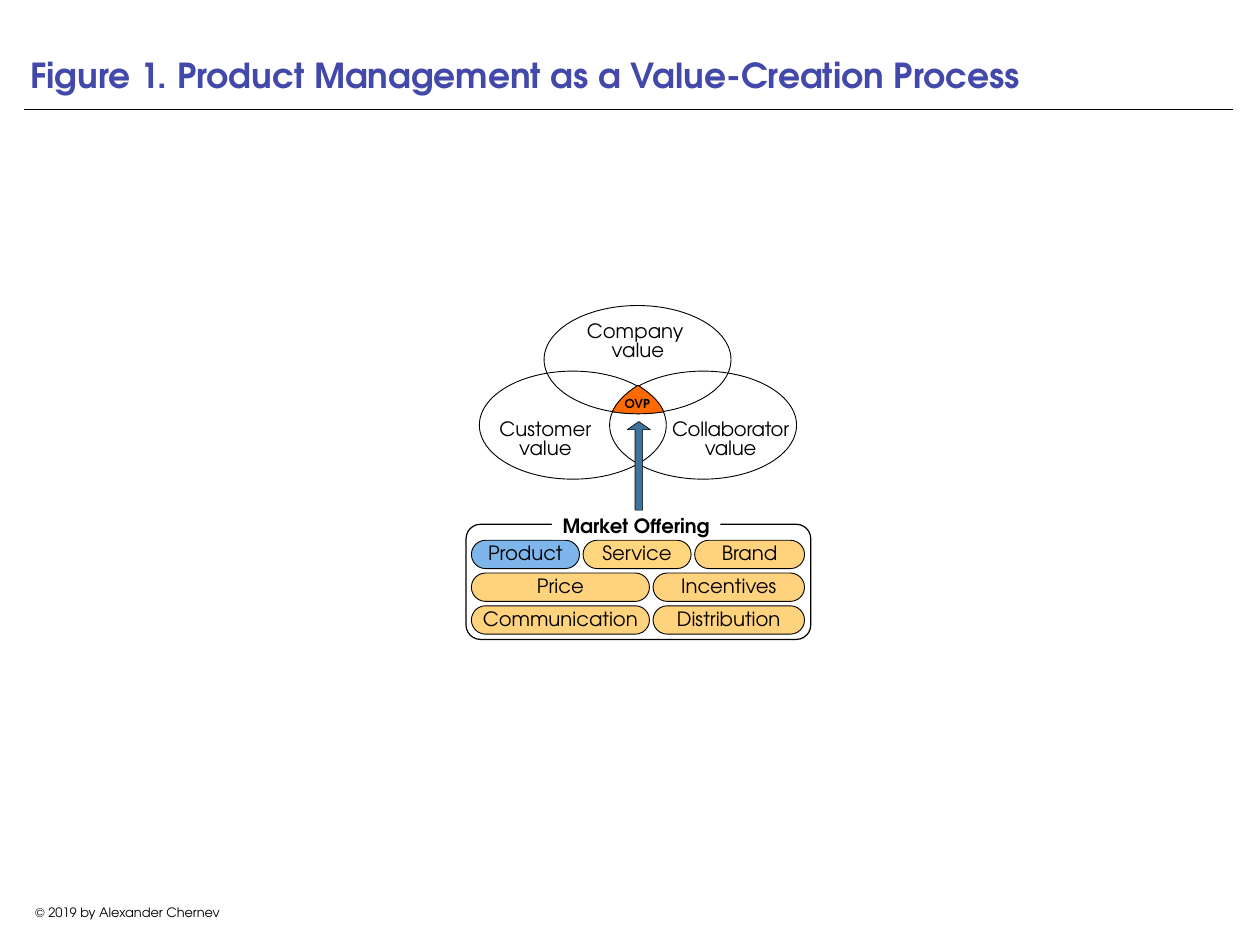
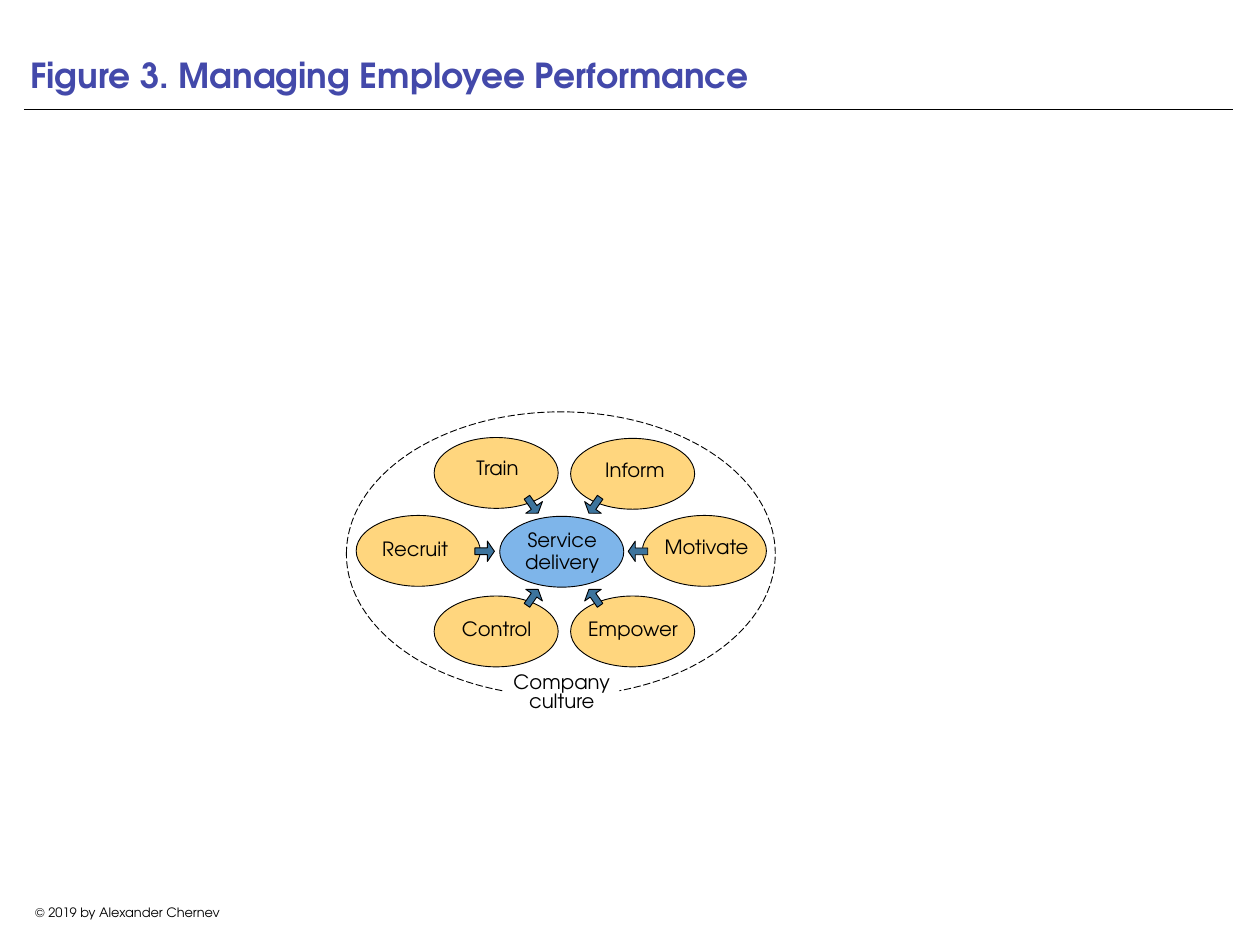
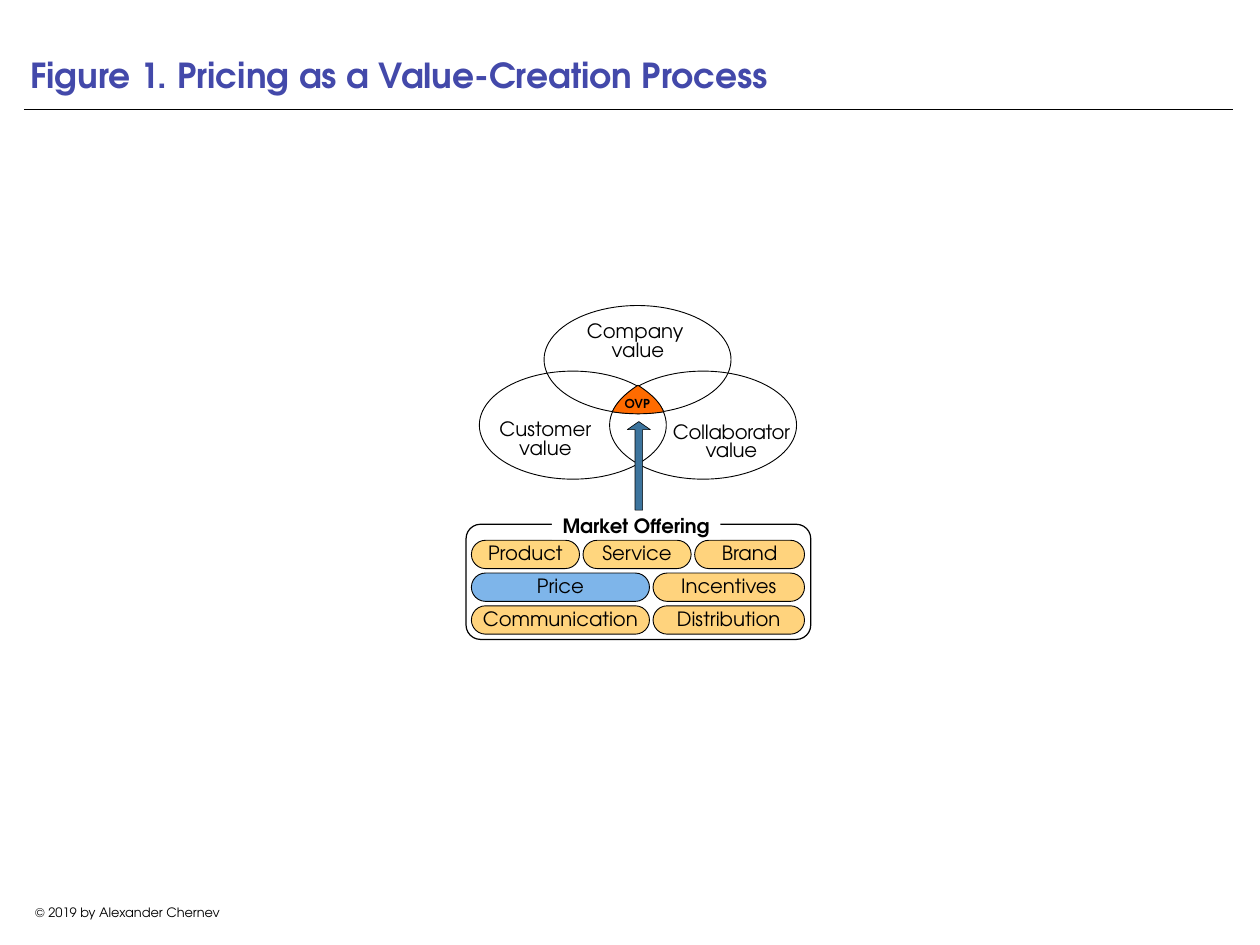
from typing import NamedTuple, Optional

from lxml import etree
from pptx import Presentation
from pptx.dml.color import RGBColor
from pptx.enum.dml import MSO_LINE
from pptx.enum.shapes import MSO_CONNECTOR, MSO_SHAPE as SHAPE
from pptx.enum.text import MSO_ANCHOR as ANCHOR, PP_ALIGN as ALIGN
from pptx.oxml.ns import qn
from pptx.util import Inches, Pt

BLACK = RGBColor(0x00, 0x00, 0x00)
WHITE = RGBColor(0xFF, 0xFF, 0xFF)
INDIGO = RGBColor(0x43, 0x49, 0xAA)
AMBER = RGBColor(0xFF, 0xD6, 0x7E)
SAND = RGBColor(0xFF, 0xD3, 0x7D)
SKY = RGBColor(0x7E, 0xB5, 0xEA)
STEEL = RGBColor(0x3D, 0x74, 0x9D)
ORANGE = RGBColor(0xFF, 0x6B, 0x00)

FONT = "TeX Gyre Adventor"
FOOTER = "© 2019 by Alexander Chernev"
NO_INSET = (0, 0, 0, 0)


class Box(NamedTuple):
    x: float
    y: float
    w: float
    h: float


class Style(NamedTuple):
    size: float = 16
    bold: bool = False
    color: RGBColor = BLACK
    align: ALIGN = ALIGN.CENTER
    anchor: ANCHOR = ANCHOR.MIDDLE
    spacing: float = 1.0
    tracking: int = 0
    insets: tuple = NO_INSET
    wrap: bool = True


class Pill(NamedTuple):
    text: str
    w: float
    fill: RGBColor = SAND


class Node(NamedTuple):
    text: str
    x: float
    y: float
    label_x: float
    label_y: float
    arrow_x: float
    arrow_y: float
    angle: float


TITLE = Style(28, True, INDIGO, ALIGN.LEFT, ANCHOR.BOTTOM, insets=(0.07,) * 4)
CREDIT = Style(10.5, anchor=ANCHOR.TOP, insets=(0.1, 0.05, 0.1, 0.05), wrap=False)
TIGHT = Style(spacing=0.8)
TRACKED = TIGHT._replace(tracking=-20)
PILL = TIGHT._replace(anchor=ANCHOR.BOTTOM)
CAPTION = TIGHT._replace(anchor=ANCHOR.TOP)
HEADING = Style(bold=True)
OVP = Style(10, True, align=ALIGN.LEFT)
CENTRE_LABEL = Style(spacing=0.9)
NODE_LABEL = CENTRE_LABEL._replace(anchor=ANCHOR.TOP)

VALUE_W, VALUE_H = 2.11, 1.22
VALUE_CIRCLES = [(5.41, 4.19), (6.88, 4.19), (6.14, 3.45)]
OVP_START = (6.91, 4.65)
OVP_CURVES = [
    ((6.96, 4.54), (7.06, 4.44), (7.2, 4.35)),
    ((7.34, 4.44), (7.45, 4.54), (7.49, 4.65)),
    ((7.31, 4.68), (7.1, 4.68), (6.91, 4.65)),
]
CURVE_STEPS = 12

PILL_X, PILL_Y, PILL_H = 5.32, 6.1, 0.32
PILL_GAP, PILL_PITCH = 0.04, 0.37
PILL_ROWS = [
    [Pill("Product", 1.22, AMBER), Pill("Service", 1.22, AMBER), Pill("Brand", 1.24)],
    [Pill("Price", 2.01), Pill("Incentives", 1.71)],
    [Pill("Communication", 2.01), Pill("Distribution", 1.71)],
]

NODE_W, NODE_H, LABEL_W, LABEL_H = 1.4, 0.8, 1.47, 0.38
NODES = [
    Node("Recruit", 4.02, 5.82, 3.95, 6.09, 5.36, 6.11, 0),
    Node("Motivate", 7.25, 5.82, 7.24, 6.07, 7.09, 6.11, 180),
    Node("Empower", 6.44, 6.73, 6.41, 7.0, 6.6, 6.63, 235),
    Node("Control", 4.9, 6.73, 4.87, 7.0, 5.9, 6.63, 305),
    Node("Train", 4.9, 4.94, 4.88, 5.18, 5.9, 5.59, 55),
    Node("Inform", 6.44, 4.95, 6.43, 5.2, 6.6, 5.59, 125),
]


def write(sp, text: str, style: Style) -> None:
    tf = sp.text_frame
    left, top, right, bottom = map(Inches, style.insets)
    frame = dict(word_wrap=style.wrap, vertical_anchor=style.anchor, margin_left=left,
                 margin_top=top, margin_right=right, margin_bottom=bottom)
    for name, value in frame.items():
        setattr(tf, name, value)
    p = tf.paragraphs[0]
    p.text = text
    p.alignment = style.align
    p.line_spacing = style.spacing
    for r in p.runs:
        for name, value in dict(name=FONT, size=Pt(style.size), bold=style.bold).items():
            setattr(r.font, name, value)
        r.font.color.rgb = style.color
        if style.tracking:
            r.font._element.set("spc", str(style.tracking))


def add_text(s, box: Box, text: str, style: Style) -> None:
    write(s.shapes.add_textbox(*map(Inches, box)), text, style)


def paint(sp, fill: Optional[RGBColor], width: float) -> None:
    sp.shadow.inherit = False
    if fill is None:
        sp.fill.background()
    else:
        sp.fill.solid()
        sp.fill.fore_color.rgb = fill
    if width:
        sp.line.color.rgb = BLACK
        sp.line.width = Pt(width)
    else:
        sp.line.fill.background()


def add_shape(s, kind: SHAPE, box: Box, fill: Optional[RGBColor] = None,
              width: float = 0.75, adjust: tuple = ()):
    sp = s.shapes.add_shape(kind, *map(Inches, box))
    paint(sp, fill, width)
    for i, value in enumerate(adjust):
        sp.adjustments[i] = value
    return sp


def add_arrow(s, box: Box, angle: float, head: float, width: float = 0.75) -> None:
    add_shape(s, SHAPE.RIGHT_ARROW, box, STEEL, width, (0.33, head)).rotation = angle


def add_base(prs, title: str):
    s = prs.slides.add_slide(prs.slide_layouts[6])
    add_text(s, Box(0.27, 10.16, 2.34, 0.28), FOOTER, CREDIT)
    rule = s.shapes.add_connector(MSO_CONNECTOR.STRAIGHT, *map(Inches, (0.27, 1.24, 13.92, 1.24)))
    rule.line.color.rgb = BLACK
    rule.line.width = Pt(0.5)
    etree.SubElement(rule._element.spPr, qn("a:effectLst"))
    add_text(s, Box(0.27, 0, 13.64, 1.15), title, TITLE)
    return s


def bezier(points: tuple, t: float) -> tuple:
    u = 1 - t
    weights = (u ** 3, 3 * u * u * t, 3 * u * t * t, t ** 3)
    return tuple(Inches(sum(w * p[axis] for w, p in zip(weights, points))) for axis in (0, 1))


def add_ovp(s) -> None:
    start, outline = OVP_START, []
    for curve in OVP_CURVES:
        outline += [bezier((start, *curve), i / CURVE_STEPS) for i in range(1, CURVE_STEPS + 1)]
        start = curve[-1]
    builder = s.shapes.build_freeform(*map(Inches, OVP_START))
    builder.add_line_segments(outline, close=True)
    paint(builder.convert_to_shape(), ORANGE, 0.75)
    add_text(s, Box(7.05, 4.46, 0.46, 0.2), "OVP", OVP)


def add_offering(s, focus: str) -> None:
    add_shape(s, SHAPE.ROUNDED_RECTANGLE, Box(5.26, 5.92, 3.89, 1.3), width=1, adjust=(0.125,))
    for i, row in enumerate(PILL_ROWS):
        x = PILL_X
        for pill in row:
            box = Box(x, PILL_Y + i * PILL_PITCH, pill.w, PILL_H)
            fill = SKY if pill.text == focus else pill.fill
            write(add_shape(s, SHAPE.ROUNDED_RECTANGLE, box, fill, adjust=(0.5,)), pill.text, PILL)
            x += pill.w + PILL_GAP
    heading = add_shape(s, SHAPE.RECTANGLE, Box(6.23, 5.77, 1.9, 0.32), WHITE, 0)
    write(heading, "Market Offering", HEADING)


def add_value_slide(prs, title: str, focus: str, collaborator: Box) -> None:
    s = add_base(prs, title)
    for x, y in VALUE_CIRCLES:
        add_shape(s, SHAPE.OVAL, Box(x, y, VALUE_W, VALUE_H))
    add_text(s, Box(5.43, 4.58, 1.45, 0.79), "Customer value", TIGHT)
    add_text(s, collaborator, "Collaborator value", TRACKED)
    add_text(s, Box(6.33, 3.57, 1.74, 0.59), "Company \nvalue", TIGHT)
    add_ovp(s)
    add_offering(s, focus)
    add_arrow(s, Box(6.71, 5.13, 1, 0.26), 270, 0.35, 0.5)


def add_performance_slide(prs, title: str) -> None:
    s = add_base(prs, title)
    culture = add_shape(s, SHAPE.OVAL, Box(3.91, 4.65, 4.84, 3.21))
    culture.line.dash_style = MSO_LINE.LONG_DASH
    for n in NODES:
        add_shape(s, SHAPE.OVAL, Box(n.x, n.y, NODE_W, NODE_H), AMBER)
        add_text(s, Box(n.label_x, n.label_y, LABEL_W, LABEL_H), n.text, NODE_LABEL)
        add_arrow(s, Box(n.arrow_x, n.arrow_y, 0.22, 0.23), n.angle, 0.36)
    caption = add_shape(s, SHAPE.RECTANGLE, Box(5.69, 7.62, 1.3, 0.54), WHITE, 0)
    write(caption, "Company culture", CAPTION)
    add_shape(s, SHAPE.OVAL, Box(5.64, 5.83, NODE_W, NODE_H), SKY)
    add_text(s, Box(5.61, 5.96, LABEL_W, 0.55), "Service delivery", CENTRE_LABEL)


def main() -> None:
    prs = Presentation()
    prs.slide_width, prs.slide_height = Inches(14.22), Inches(10.67)
    add_value_slide(prs, "Figure 1. Product Management as a Value-Creation Process",
                    "Product", Box(7.57, 4.63, 1.35, 0.68))
    add_performance_slide(prs, "Figure 3. Managing Employee Performance")
    add_value_slide(prs, "Figure 1. Pricing as a Value-Creation Process",
                    "Price", Box(7.58, 4.66, 1.35, 0.68))
    prs.save("out.pptx")


if __name__ == "__main__":
    main()
